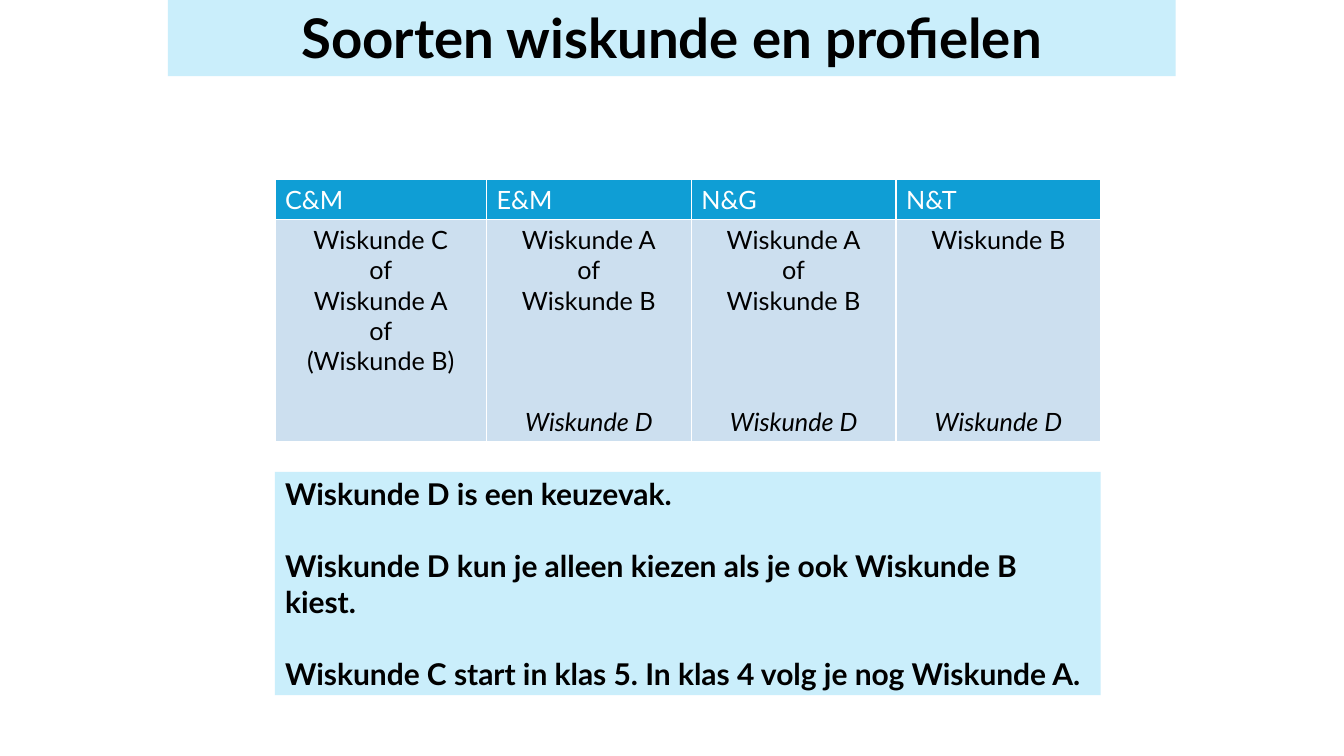
from dataclasses import dataclass

from lxml import etree
from pptx import Presentation
from pptx.dml.color import RGBColor
from pptx.enum.text import MSO_ANCHOR, MSO_AUTO_SIZE, PP_ALIGN
from pptx.oxml.ns import qn
from pptx.util import Cm, Pt

LEFT, CENTER = PP_ALIGN.LEFT, PP_ALIGN.CENTER
TOP, MIDDLE = MSO_ANCHOR.TOP, MSO_ANCHOR.MIDDLE
NO_AUTOFIT = MSO_AUTO_SIZE.NONE


@dataclass(frozen=True)
class Theme:
    font: str = "Lato"
    panel: str = "CAEEFB"
    header: str = "0F9ED5"
    cell: str = "CCDFEF"
    light: str = "FFFFFF"
    dark: str = "000000"
    title_size: float = 39
    table_size: float = 18
    rule_size: float = 21.4
    line_height: float = 1.2


@dataclass(frozen=True)
class Box:
    left: float
    top: float
    width: float
    height: float


@dataclass(frozen=True)
class Profile:
    name: str
    subjects: tuple[str, ...]
    elective: str = ""


THEME = Theme()
TITLE_BOX = Box(4.23, -0.08, 25.4, 2)
TABLE_BOX = Box(6.93, 4.52, 20.81, 6.6)
RULES_BOX = Box(6.93, 11.89, 20.81, 5.63)
COLUMN_WIDTHS = (5.33, 5.16, 5.16, 5.16)
ROW_HEIGHTS = (1, 5.6)
ELECTIVE_LINE = 6
PROFILES = (
    Profile("C&M", ("Wiskunde C", "of", "Wiskunde A", "of", "(Wiskunde B)")),
    Profile("E&M", ("Wiskunde A", "of", "Wiskunde B"), "Wiskunde D"),
    Profile("N&G", ("Wiskunde A", "of", "Wiskunde B"), "Wiskunde D"),
    Profile("N&T", ("Wiskunde B",), "Wiskunde D"),
)
RULES = (
    "Wiskunde D is een keuzevak.",
    "Wiskunde D kun je alleen kiezen als je ook Wiskunde B kiest.",
    "Wiskunde C start in klas 5. In klas 4 volg je nog Wiskunde A.",
)


def apply_format(target, values: dict) -> None:
    for name, value in values.items():
        setattr(target, name, value)


def fill_solid(target, color: str) -> None:
    target.fill.solid()
    target.fill.fore_color.rgb = RGBColor.from_string(color)


def write_paragraph(frame, index: int, text: str, size: float, color: str,
                    alignment=LEFT, space_before: float = 0,
                    bold: bool = False, italic: bool = False) -> None:
    paragraph = frame.paragraphs[0] if index == 0 else frame.add_paragraph()
    properties = paragraph._p.get_or_add_pPr()
    apply_format(paragraph, {"alignment": alignment, "space_before": Pt(space_before),
                             "space_after": Pt(0), "line_spacing": 1.0})
    for name in ("marL", "indent"):
        properties.set(name, "0")
    etree.SubElement(properties, qn("a:buNone"))
    run = paragraph.add_run()
    run.text = text
    apply_format(run.font, {"name": THEME.font, "size": Pt(size),
                            "bold": bold, "italic": italic})
    run.font.color.rgb = RGBColor.from_string(color)


def place_panel(placeholder, box: Box, wrap: bool) -> None:
    apply_format(placeholder, {"left": Cm(box.left), "top": Cm(box.top),
                               "width": Cm(box.width), "height": Cm(box.height)})
    apply_format(placeholder.text_frame, {"word_wrap": wrap, "auto_size": NO_AUTOFIT,
                                          "vertical_anchor": MIDDLE})
    fill_solid(placeholder, THEME.panel)


def format_cell(cell, color: str, anchor) -> None:
    properties = cell._tc.get_or_add_tcPr()
    for side in ("lnL", "lnR", "lnT", "lnB"):
        border = etree.SubElement(properties, qn(f"a:{side}"), w=str(Pt(1)))
        solid = etree.SubElement(border, qn("a:solidFill"))
        etree.SubElement(solid, qn("a:srgbClr"), val=THEME.light)
    fill_solid(cell, color)
    cell.vertical_anchor = anchor


def add_profile_table(slide) -> None:
    table = slide.shapes.add_table(
        len(ROW_HEIGHTS), len(PROFILES), Cm(TABLE_BOX.left), Cm(TABLE_BOX.top),
        Cm(TABLE_BOX.width), Cm(TABLE_BOX.height)).table
    for row, height in zip(table.rows, ROW_HEIGHTS):
        row.height = Cm(height)
    line = THEME.table_size * THEME.line_height
    for number, (profile, width) in enumerate(zip(PROFILES, COLUMN_WIDTHS)):
        table.columns[number].width = Cm(width)
        header, body = table.cell(0, number), table.cell(1, number)
        format_cell(header, THEME.header, MIDDLE)
        write_paragraph(header.text_frame, 0, profile.name, THEME.table_size, THEME.light)
        format_cell(body, THEME.cell, TOP)
        for index, subject in enumerate(profile.subjects):
            write_paragraph(body.text_frame, index, subject, THEME.table_size,
                            THEME.dark, CENTER)
        if profile.elective:
            count = len(profile.subjects)
            write_paragraph(body.text_frame, count, profile.elective, THEME.table_size,
                            THEME.dark, CENTER, (ELECTIVE_LINE - count) * line, italic=True)


def main() -> None:
    presentation = Presentation()
    apply_format(presentation, {"slide_width": Cm(33.87), "slide_height": Cm(19.05)})
    slide = presentation.slides.add_slide(presentation.slide_layouts[1])

    title = slide.shapes.title
    place_panel(title, TITLE_BOX, True)
    write_paragraph(title.text_frame, 0, "Soorten wiskunde en profielen",
                    THEME.title_size, THEME.dark, CENTER, bold=True)

    add_profile_table(slide)

    rules = slide.placeholders[1]
    place_panel(rules, RULES_BOX, False)
    gap = THEME.rule_size * THEME.line_height
    for index, rule in enumerate(RULES):
        write_paragraph(rules.text_frame, index, rule, THEME.rule_size, THEME.dark,
                        space_before=gap if index else 0, bold=True)

    presentation.save("out.pptx")


if __name__ == "__main__":
    main()
